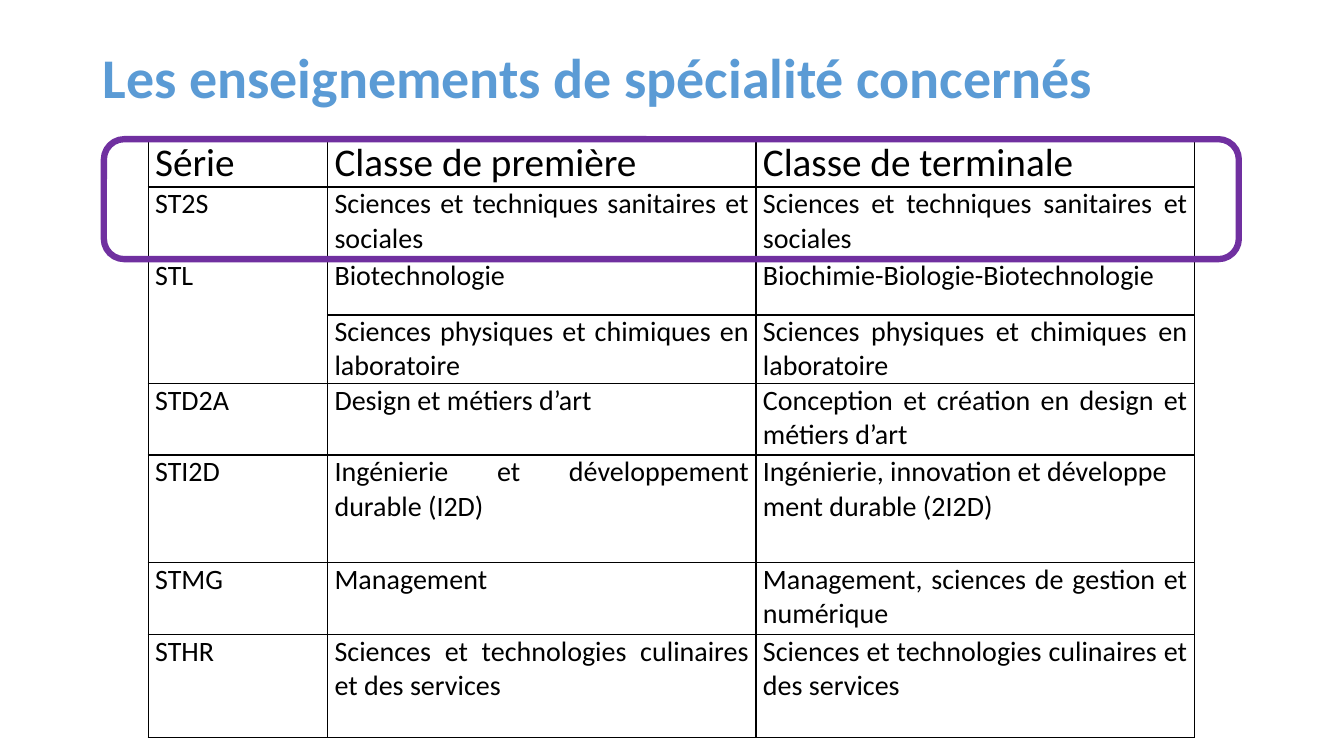
from typing import NamedTuple

from lxml.etree import SubElement
from pptx import Presentation
from pptx.dml.color import RGBColor
from pptx.enum.shapes import MSO_SHAPE
from pptx.enum.text import MSO_ANCHOR, PP_ALIGN
from pptx.oxml import parse_xml
from pptx.oxml.ns import nsdecls, qn
from pptx.slide import Slide
from pptx.table import Table, _Cell
from pptx.text.text import TextFrame
from pptx.util import Pt

BLUE = RGBColor(0x5B, 0x9B, 0xD5)
PURPLE = RGBColor(0x70, 0x30, 0xA0)
BLACK = RGBColor(0, 0, 0)
FONT = "Calibri"
NBSP = chr(160)
COLUMN_WIDTHS = (128.2, 306, 313.2)


class Row(NamedTuple):
    height: float
    series: str
    first_year: str
    final_year: str
    size: float = 20


ROWS = (
    Row(34.2, "Série", "Classe de première", "Classe de terminale", 28),
    Row(51.1, "ST2S", "Sciences et techniques sanitaires et sociales",
        "Sciences et techniques sanitaires et sociales"),
    Row(40.3, "STL", "Biotechnologie", "Biochimie-Biologie-Biotechnologie"),
    Row(49, "", "Sciences physiques et chimiques en laboratoire",
        "Sciences physiques et chimiques en laboratoire"),
    Row(51.1, "STD2A", "Design et métiers d’art",
        "Conception et création en design et métiers d’art"),
    Row(77, "STI2D", "Ingénierie et développement durable (I2D)",
        NBSP.join(("Ingénierie,", "innovation", "et", "développement durable (2I2D)"))),
    Row(51.1, "STMG", "Management", "Management, sciences de gestion et numérique"),
    Row(73.6, "STHR", "Sciences et technologies culinaires et des services",
        "Sciences et technologies culinaires et des services"),
)
STL_ROWS = (2, 3)


def write(frame: TextFrame, text: str, *, size: float, color: RGBColor = BLACK,
          bold: bool = False, align: PP_ALIGN = PP_ALIGN.LEFT,
          line_spacing: float = 1.0) -> None:
    frame.word_wrap = True
    paragraph = frame.paragraphs[0]
    paragraph.alignment = align
    paragraph.line_spacing = line_spacing
    run = paragraph.add_run()
    run.text = text
    run.font.name = FONT
    run.font.size = Pt(size)
    run.font.bold = bold
    run.font.color.rgb = color


def add_borders(cell: _Cell, sides: str) -> None:
    """Draw black borders on the given sides, in the order L, R, T, B."""
    properties = cell._tc.get_or_add_tcPr()
    for position, side in enumerate(sides):
        line = parse_xml(f'<a:ln{side} {nsdecls("a")} w="{Pt(1)}"><a:solidFill>'
                         f'<a:srgbClr val="{BLACK}"/></a:solidFill></a:ln{side}>')
        properties.insert(position, line)


def fill_cell(cell: _Cell, text: str, size: float) -> None:
    cell.margin_left = cell.margin_right = Pt(5)
    cell.margin_top = cell.margin_bottom = 0
    cell.vertical_anchor = MSO_ANCHOR.TOP
    cell.fill.background()
    if cell.is_spanned:
        add_borders(cell, "LRB")
        return
    write(cell.text_frame, text, size=size, align=PP_ALIGN.JUSTIFY)
    add_borders(cell, "LRT" if cell.is_merge_origin else "LRTB")


def add_courses(slide: Slide) -> Table:
    courses = slide.shapes.add_table(
        len(ROWS), len(COLUMN_WIDTHS), Pt(105.8), Pt(99.4),
        Pt(sum(COLUMN_WIDTHS)), Pt(sum(row.height for row in ROWS))).table
    courses.first_row = courses.horz_banding = False
    for column, width in zip(courses.columns, COLUMN_WIDTHS):
        column.width = Pt(width)
    stl_start, stl_end = STL_ROWS
    courses.cell(stl_start, 0).merge(courses.cell(stl_end, 0))
    for row_index, row in enumerate(ROWS):
        courses.rows[row_index].height = Pt(row.height)
        for column_index, text in enumerate((row.series, row.first_year, row.final_year)):
            fill_cell(courses.cell(row_index, column_index), text, row.size)
    return courses


def add_title(slide: Slide) -> None:
    title = slide.shapes.add_textbox(Pt(66.2), Pt(28.8), Pt(828), Pt(57.6)).text_frame
    title.vertical_anchor = MSO_ANCHOR.MIDDLE
    write(title, "Les enseignements de spécialité concernés",
          size=40, color=BLUE, bold=True, line_spacing=0.9)


def add_st2s_highlight(slide: Slide) -> None:
    highlight = slide.shapes.add_shape(
        MSO_SHAPE.ROUNDED_RECTANGLE, Pt(74.2), Pt(99.4), Pt(810.7), Pt(85.7))
    highlight.adjustments[0] = 0.17
    highlight.shadow.inherit = False
    highlight.fill.background()
    highlight.line.color.rgb = PURPLE
    highlight.line.width = Pt(4.5)


def main() -> None:
    presentation = Presentation()
    presentation.slide_width = Pt(960)
    presentation.slide_height = Pt(540)
    slide = presentation.slides.add_slide(presentation.slide_layouts[6])
    add_title(slide)
    add_courses(slide)
    add_st2s_highlight(slide)
    presentation.save("out.pptx")


if __name__ == "__main__":
    main()
